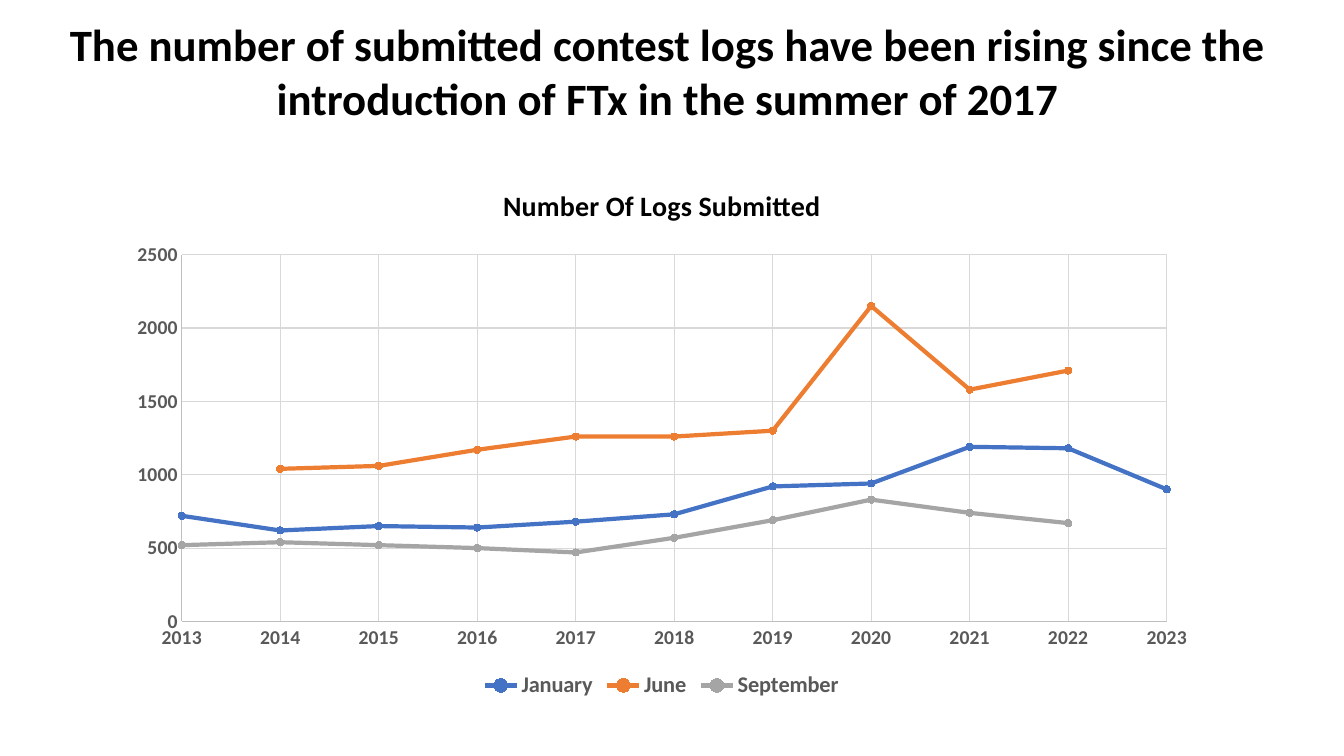
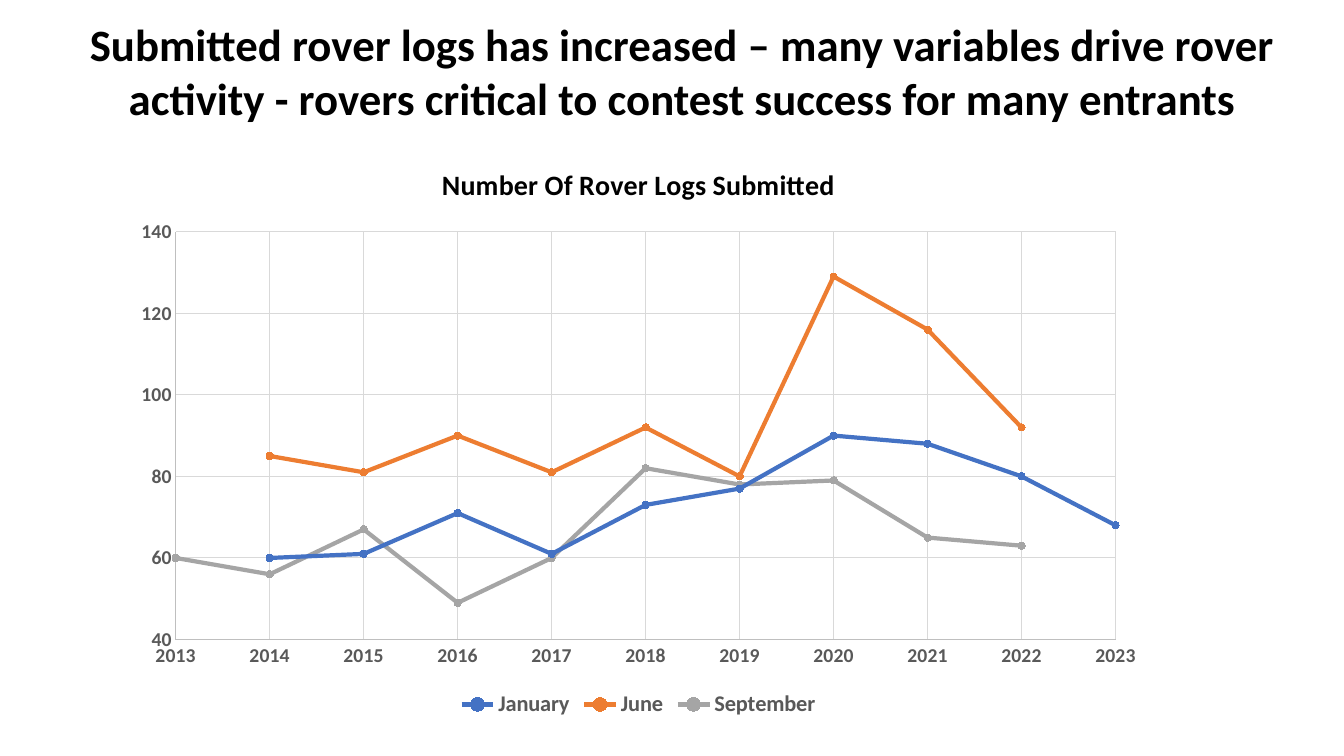
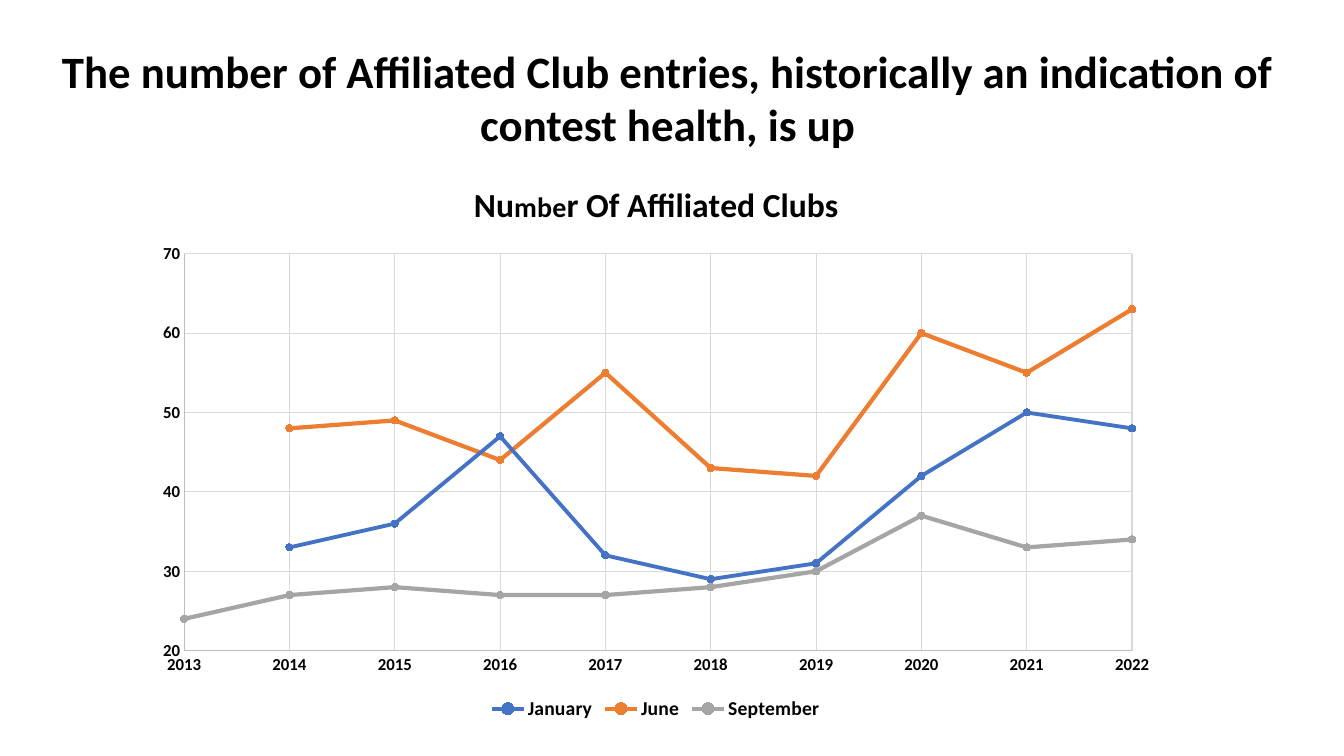
from lxml import etree
from pptx import Presentation
from pptx.chart.data import XyChartData
from pptx.dml.color import RGBColor
from pptx.enum.chart import XL_CHART_TYPE as CT, XL_LEGEND_POSITION as LP
from pptx.enum.chart import XL_MARKER_STYLE as MS, XL_TICK_MARK as TM
from pptx.enum.text import MSO_ANCHOR, MSO_AUTO_SIZE, PP_ALIGN
from pptx.oxml.ns import qn
from pptx.util import Pt

FONT = "Calibri"
COLORS = {"text": "000000", "label": "595959", "axis": "BFBFBF", "grid": "D9D9D9",
          "January": "4472C4", "June": "ED7D31", "September": "A5A5A5"}

SLIDES = [
    {"title": "The number of submitted contest logs have been rising since the "
              "introduction of FTx in the summer of 2017",
     "title_box": (35.3, 8, 883.4, 85), "indent": 0,
     "chart_box": (82.1, 117.4, 781.2, 385.2),
     "plot_box": (129.8, 181.9, 703.6, 262.1),
     "heading": [("Number Of Logs Submitted", 20)], "heading_at": (355.7, 129),
     "label_color": "label", "axis_size": 14, "legend_size": 16,
     "x": (2013, 2023, 1), "y": (0, 2500, 500), "widths": {},
     "series": {
         "January": [900, 1180, 1190, 940, 920, 730, 680, 640, 650, 620, 720],
         "June": [None, 1710, 1580, 2150, 1300, 1260, 1260, 1170, 1060, 1040, None],
         "September": [None, 670, 740, 830, 690, 570, 470, 500, 520, 540, 520]}},
    {"title": "Submitted rover logs has increased – many variables drive rover "
              "activity - rovers critical to contest success for many entrants",
     "title_box": (9.4, 8, 920.2, 85), "indent": 36,
     "chart_box": (86.4, 104.4, 739.4, 411.8),
     "plot_box": (125.5, 165.5, 671.4, 291.4),
     "heading": [("Number Of Rover Logs Submitted", 20)], "heading_at": (312.1, 114),
     "label_color": "label", "axis_size": 14, "legend_size": 16,
     "x": (2013, 2023, 1), "y": (40, 140, 20), "widths": {},
     "series": {
         "January": [68, 80, 88, 90, 77, 73, 61, 71, 61, 60, None],
         "June": [None, 92, 116, 129, 80, 92, 81, 90, 81, 85, None],
         "September": [None, 63, 65, 79, 78, 82, 60, 49, 67, 56, 60]}},
    {"title": "The number of Affiliated Club entries, historically an indication of "
              "contest health, is up",
     "title_box": (35.3, 26.8, 883.4, 85), "indent": 0,
     "chart_box": (101.5, 117.4, 733.7, 400.3),
     "plot_box": (131.5, 181.2, 677.1, 283.6),
     "heading": [("Nu", 24), ("mbe", 20), ("r Of Affiliated Clubs", 24)],
     "heading_at": (336.4, 129),
     "label_color": "text", "axis_size": 12, "legend_size": 14,
     "x": (2013, 2022, 1), "y": (20, 70, 10), "widths": {"January": 2.75},
     "series": {
         "January": [48, 50, 42, 31, 29, 32, 47, 36, 33, None],
         "June": [63, 55, 60, 42, 43, 55, 44, 49, 48, None],
         "September": [34, 33, 37, 30, 28, 27, 27, 28, 27, 24]}},
]


def rgb(name):
    return RGBColor.from_string(COLORS[name])


def set_font(font, size, color="text"):
    for key, value in {"name": FONT, "size": Pt(size), "bold": True}.items():
        setattr(font, key, value)
    font.color.rgb = rgb(color)


def set_line(line, color, width):
    line.color.rgb = rgb(color)
    line.width = Pt(width)


def place(parent, index, chart_box, box, inner=False):
    for old in parent.findall(qn("c:layout")):
        parent.remove(old)
    layout = etree.Element(qn("c:layout"))
    manual = etree.SubElement(layout, qn("c:manualLayout"))
    left, top, width, height = chart_box
    fractions = [(box[0] - left) / width, (box[1] - top) / height]
    fractions += [v / total for v, total in zip(box[2:], (width, height))]
    tags = [("layoutTarget", "inner")] if inner else []
    tags += [("xMode", "edge"), ("yMode", "edge")]
    tags += [(tag, f"{v:.4f}") for tag, v in zip("xywh", fractions)]
    for tag, value in tags:
        etree.SubElement(manual, qn("c:" + tag)).set("val", value)
    parent.insert(index, layout)


def add_title(s, spec):
    sp = s.shapes.title
    sp.left, sp.top, sp.width, sp.height = map(Pt, spec["title_box"])
    tf = sp.text_frame
    tf.text = spec["title"]
    form = {"word_wrap": True, "auto_size": MSO_AUTO_SIZE.NONE,
            "vertical_anchor": MSO_ANCHOR.MIDDLE, "margin_left": Pt(7.2 + spec["indent"])}
    for key, value in form.items():
        setattr(tf, key, value)
    p = tf.paragraphs[0]
    p.alignment = PP_ALIGN.CENTER
    set_font(p.runs[0].font, 32)


def format_axis(axis, scale, size, color):
    low, high, step = scale
    form = {"minimum_scale": low, "maximum_scale": high, "major_unit": step,
            "major_tick_mark": TM.NONE, "minor_tick_mark": TM.NONE,
            "has_major_gridlines": True}
    for key, value in form.items():
        setattr(axis, key, value)
    set_font(axis.tick_labels.font, size, color)
    axis.tick_labels.number_format = "General"
    axis.tick_labels.number_format_is_linked = False
    set_line(axis.format.line, "axis", 0.75)
    set_line(axis.major_gridlines.format.line, "grid", 0.75)


def drop_empty_points(chart):
    for pt in list(chart._chartSpace.iter(qn("c:pt"))):
        if pt.findtext(qn("c:v")) in ("None", "", None):
            pt.getparent().remove(pt)


def add_log_chart(s, spec):
    data = XyChartData()
    last_year = spec["x"][1]
    for name, values in spec["series"].items():
        series = data.add_series(name)
        for age, value in enumerate(values):
            series.add_data_point(last_year - age, value)
    box = spec["chart_box"]
    chart = s.shapes.add_chart(CT.XY_SCATTER_LINES, *map(Pt, box), data).chart
    drop_empty_points(chart)
    set_font(chart.font, 12)

    chart.has_title = True
    title = chart.chart_title
    title.include_in_layout = False
    p = title.text_frame.paragraphs[0]
    for text, size in spec["heading"]:
        r = p.add_run()
        r.text = text
        set_font(r.font, size)
    place(title._element, 1, box, spec["heading_at"])
    place(chart._chartSpace.chart.plotArea, 0, box, spec["plot_box"], inner=True)

    chart.has_legend = True
    chart.legend.position = LP.BOTTOM
    chart.legend.include_in_layout = False
    set_font(chart.legend.font, spec["legend_size"], spec["label_color"])
    for axis, key in ((chart.category_axis, "x"), (chart.value_axis, "y")):
        format_axis(axis, spec[key], spec["axis_size"], spec["label_color"])

    plot = chart.plots[0]
    plot.vary_by_categories = False
    for series in plot.series:
        series.smooth = False
        set_line(series.format.line, series.name, spec["widths"].get(series.name, 3))
        marker = series.marker
        marker.style, marker.size = MS.CIRCLE, 5
        marker.format.fill.solid()
        marker.format.fill.fore_color.rgb = rgb(series.name)
        set_line(marker.format.line, series.name, 0.75)


def main():
    prs = Presentation()
    prs.slide_width, prs.slide_height = Pt(960), Pt(540)
    for spec in SLIDES:
        s = prs.slides.add_slide(prs.slide_layouts[5])
        add_title(s, spec)
        add_log_chart(s, spec)
    prs.save("out.pptx")


if __name__ == "__main__":
    main()
